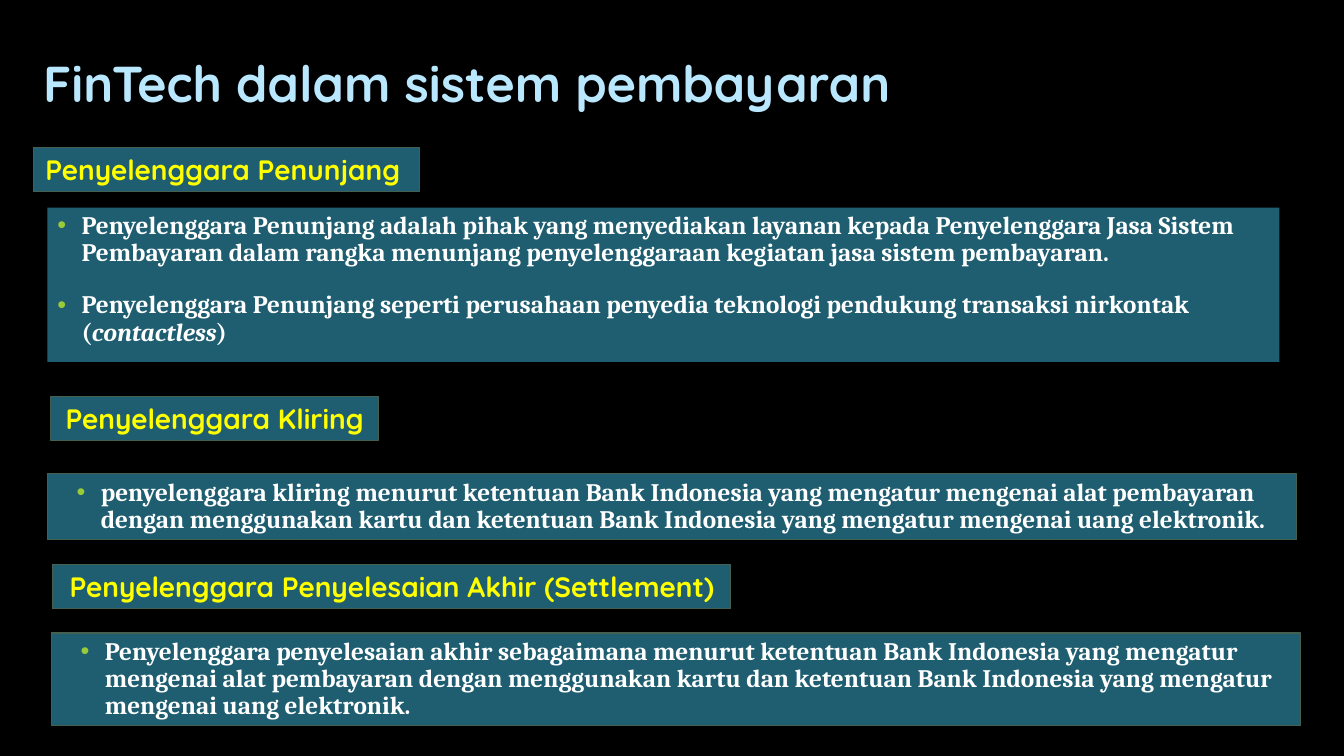
from lxml import etree
from pptx import Presentation
from pptx.dml.color import RGBColor
from pptx.enum import shapes, text
from pptx.oxml import ns
from pptx.util import Inches, Pt

BLACK = RGBColor(0x00, 0x00, 0x00)
SKY = RGBColor(0xB9, 0xE7, 0xFD)
TEAL = RGBColor(0x1E, 0x5E, 0x70)
EDGE = RGBColor(0x45, 0x5F, 0x51)
YELLOW = RGBColor(0xFF, 0xFF, 0x00)
WHITE = RGBColor(0xFF, 0xFF, 0xFF)
GREEN = "99CB38"
HEAD, BODY = "Quicksand", "Cambria"
INDENT = Inches(0.24)

# label text, label box, label inset
LABELS = [
    ("Penyelenggara Penunjang", (0.33, 1.46, 3.83, 0.44), 0.12),
    ("Penyelenggara Kliring", (0.5, 3.93, 3.25, 0.44), 0.15),
    ("Penyelenggara Penyelesaian Akhir (Settlement)", (0.52, 5.6, 6.73, 0.44), 0.17),
]

# paragraphs as lists of (words, italic), panel box, inset, outlined
PANELS = [
    ([[("Penyelenggara Penunjang adalah pihak yang menyediakan layanan kepada "
        "Penyelenggara Jasa Sistem Pembayaran dalam rangka menunjang "
        "penyelenggaraan kegiatan jasa sistem pembayaran.", False)],
      [("Penyelenggara Penunjang seperti perusahaan penyedia teknologi pendukung "
        "transaksi nirkontak (", False), ("contactless", True), (")", False)]],
     (0.47, 2.06, 12.22, 1.53), 0.1, False),
    ([[("penyelenggara kliring menurut ketentuan Bank Indonesia yang mengatur "
        "mengenai alat pembayaran dengan menggunakan kartu dan ketentuan Bank "
        "Indonesia yang mengatur mengenai uang elektronik.", False)]],
     (0.47, 4.7, 12.39, 0.65), 0.29, True),
    ([[("Penyelenggara penyelesaian akhir sebagaimana menurut ketentuan Bank "
        "Indonesia yang mengatur mengenai alat pembayaran dengan menggunakan kartu "
        "dan ketentuan Bank Indonesia yang mengatur mengenai uang elektronik.", False)]],
     (0.51, 6.28, 12.39, 0.92), 0.29, True),
]


def style(run, size, name, color):
    font = run.font
    font.size, font.name, font.bold = Pt(size), name, True
    font.color.rgb = color


def bullet(para):
    props = para._p.get_or_add_pPr()
    props.set("marL", str(INDENT))
    props.set("indent", str(-INDENT))
    tint = etree.SubElement(props, ns.qn("a:buClr"))
    etree.SubElement(tint, ns.qn("a:srgbClr"), val=GREEN)
    etree.SubElement(props, ns.qn("a:buFont"), typeface="Arial")
    etree.SubElement(props, ns.qn("a:buChar"), char="•")


def block(slide, box, inset, lined=True):
    """Add a teal rectangle and return its text frame."""
    shape = slide.shapes.add_shape(shapes.MSO_SHAPE.RECTANGLE, *map(Inches, box))
    shape.shadow.inherit = False
    shape.fill.solid()
    shape.fill.fore_color.rgb = TEAL
    if lined:
        shape.line.color.rgb = EDGE
        shape.line.width = Pt(0.75)
    else:
        shape.line.fill.background()
    frame = shape.text_frame
    frame.word_wrap = True
    frame.margin_left, frame.margin_right = Inches(inset), Inches(0.1)
    frame.vertical_anchor = text.MSO_ANCHOR.MIDDLE if lined else text.MSO_ANCHOR.TOP
    return frame


def title(slide, box, words):
    frame = slide.shapes.add_textbox(*map(Inches, box)).text_frame
    frame.word_wrap = True
    frame.vertical_anchor = text.MSO_ANCHOR.BOTTOM
    frame.text = words
    para = frame.paragraphs[0]
    para.line_spacing = 0.9
    style(para.runs[0], 36, HEAD, SKY)


def label(slide, words, box, inset):
    frame = block(slide, box, inset)
    frame.text = words
    para = frame.paragraphs[0]
    para.alignment = text.PP_ALIGN.LEFT
    style(para.runs[0], 20, HEAD, YELLOW)


def panel(slide, items, box, inset, lined):
    frame = block(slide, box, inset, lined)
    for i, parts in enumerate(items):
        para = frame.add_paragraph() if i else frame.paragraphs[0]
        bullet(para)
        para.alignment = text.PP_ALIGN.LEFT
        para.line_spacing = 0.9
        if i:
            para.space_before = Pt(18)
        for words, slant in parts:
            run = para.add_run()
            run.text = words
            style(run, 18, BODY, WHITE)
            run.font.italic = slant


def main():
    deck = Presentation()
    deck.slide_width, deck.slide_height = Inches(13.33), Inches(7.5)
    slide = deck.slides.add_slide(deck.slide_layouts[6])
    back = slide.background.fill
    back.solid()
    back.fore_color.rgb = BLACK
    title(slide, (0.33, 0.42, 13, 0.75), "FinTech dalam sistem pembayaran")
    for row in LABELS:
        label(slide, *row)
    for row in PANELS:
        panel(slide, *row)
    deck.save("out.pptx")


if __name__ == "__main__":
    main()
